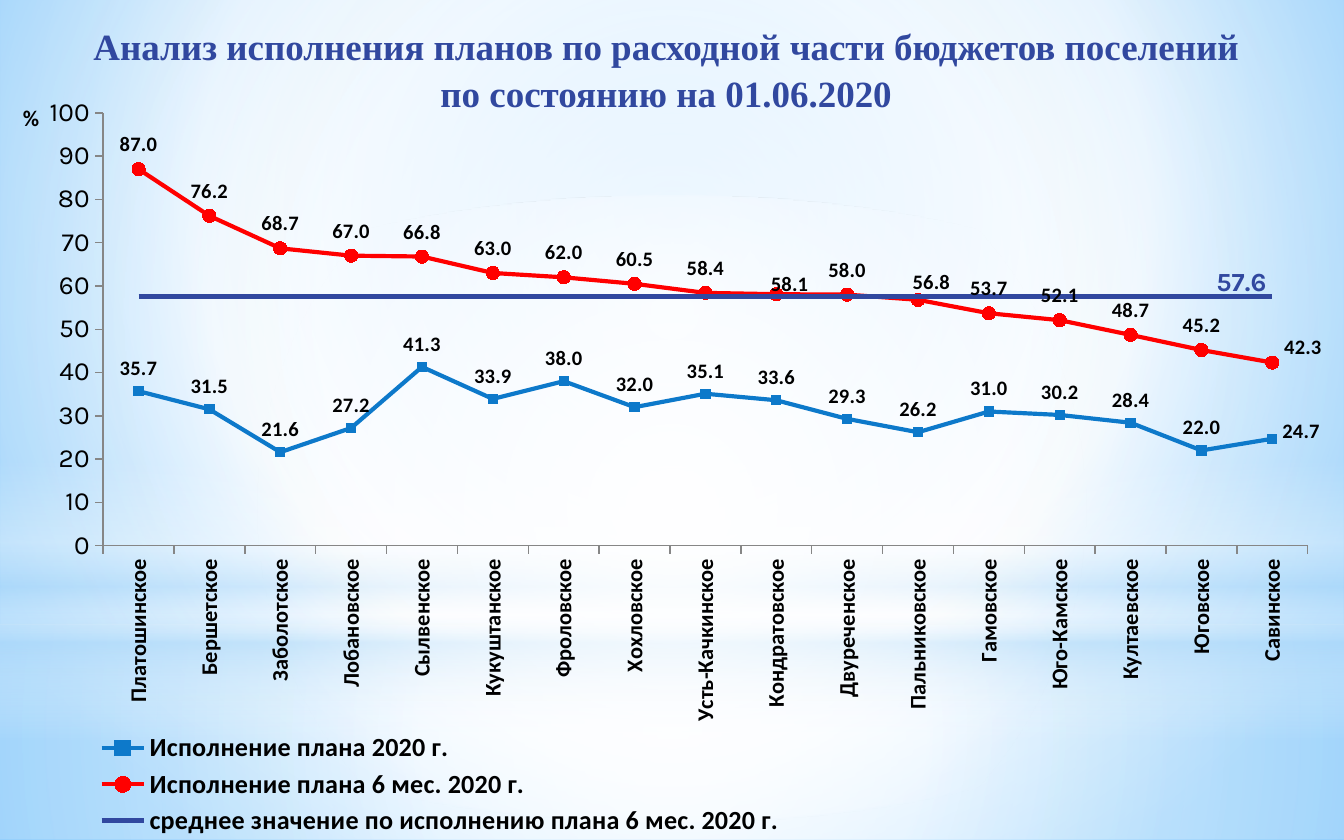
"""Build a slide with a line chart of settlement budget spending."""
from lxml import etree
from pptx import Presentation
from pptx import util as u
from pptx.chart.data import CategoryChartData
from pptx.dml.color import RGBColor
from pptx.enum import chart as ch, shapes, text
from pptx.oxml.ns import qn

BLUE = RGBColor(0x0D, 0x79, 0xCA)
RED = RGBColor(0xFF, 0x00, 0x00)
NAVY = RGBColor(0x31, 0x48, 0x9F)
BLACK = RGBColor(0x00, 0x00, 0x00)
GREY = RGBColor(0x86, 0x86, 0x86)

WIDE, HIGH = 10, 6.25
TITLE = ("Анализ исполнения планов по расходной части бюджетов поселений",
         "по состоянию на 01.06.2020")
CATS = ["Платошинское", "Бершетское", "Заболотское", "Лобановское", "Сылвенское",
        "Кукуштанское", "Фроловское", "Хохловское", "Усть-Качкинское",
        "Кондратовское", "Двуреченское", "Пальниковское", "Гамовское",
        "Юго-Камское", "Култаевское", "Юговское", "Савинское"]
TOP, RIGHT = ch.XL_LABEL_POSITION.ABOVE, ch.XL_LABEL_POSITION.RIGHT
SQUARE, ROUND, NONE = (ch.XL_MARKER_STYLE.SQUARE, ch.XL_MARKER_STYLE.CIRCLE,
                       ch.XL_MARKER_STYLE.NONE)
SERIES = [
    ("Исполнение плана 2020 г.",
     [35.7, 31.5, 21.6, 27.2, 41.3, 33.9, 38, 32, 35.1, 33.6, 29.3, 26.2, 31,
      30.2, 28.4, 22, 24.7], BLUE, 2.25, SQUARE, 5),
    ("Исполнение плана 6 мес. 2020 г.",
     [87, 76.2, 68.7, 67, 66.8, 63, 62, 60.5, 58.4, 58.1, 58, 56.8, 53.7,
      52.1, 48.7, 45.2, 42.3], RED, 2.25, ROUND, 7),
    ("среднее значение по исполнению плана 6 мес. 2020 г.",
     [57.6] * len(CATS), NAVY, 2.75, NONE, 5),
]
LABELS = [
    (0, 16, RIGHT, (0, -0.01), 11, "Calibri", BLACK),
    (1, 9, TOP, (0.01, 0.02), 11, "Calibri", BLACK),
    (1, 11, TOP, (0.01, 0.01), 11, "Calibri", BLACK),
    (1, 16, RIGHT, (0, -0.02), 11, "Calibri", BLACK),
    (2, 15, TOP, (0.03, 0.01), 14, "Karla", NAVY),
]
CENTRE = (50, 50, 50, 50)
BACK = [(0, "9ED5FF", 100), (60, "FFFFFF", 100), (100, "5BB9FF", 100)]
RECT, OVAL = shapes.MSO_SHAPE.RECTANGLE, shapes.MSO_SHAPE.OVAL
GLOWS = [
    (RECT, 4.65, 1.6, CENTRE,
     [(0, "FFFFFF", 91), (37, "FFFFFF", 76), (100, "B4DCFA", 79)]),
    (RECT, 0, 4.65, CENTRE,
     [(0, "FFFFFF", 89), (48, "FFFFFF", 62), (100, "B4DCFA", 79)]),
    (RECT, 3.43, 2.08, None,
     [(0, "FFFFFF", 0), (29, "FFFFFF", 30), (45, "B4DCFA", 40),
      (55, "FFFFFF", 26), (65, "B4DCFA", 60), (100, "FFFFFF", 0)]),
    (OVAL, 1.46, 4.65, CENTRE, [(0, "FFFFFF", 100), (56, "FFFFFF", 0)]),
]


def shade(owner, stops, rim):
    grad = next(owner.iter(qn("a:gradFill")))
    for kid in list(grad):
        grad.remove(kid)
    row = etree.SubElement(grad, qn("a:gsLst"))
    for spot, hue, clear in stops:
        stop = etree.SubElement(row, qn("a:gs"), pos=str(spot * 1000))
        tint = etree.SubElement(stop, qn("a:srgbClr"), val=hue)
        if clear < 100:
            etree.SubElement(tint, qn("a:alpha"), val=str(clear * 1000))
    if rim:
        ring = etree.SubElement(grad, qn("a:path"), attrib={"path": "circle"})
        sides = {k: str(v * 1000) for k, v in zip("ltrb", rim)}
        etree.SubElement(ring, qn("a:fillToRect"), attrib=sides)
    else:
        etree.SubElement(grad, qn("a:lin"), ang="5400000", scaled="0")


def place(box, slot, rule):
    for old in box.findall(qn("c:layout")):
        box.remove(old)
    frame = etree.Element(qn("c:layout"))
    hand = etree.SubElement(frame, qn("c:manualLayout"))
    for tag, val in rule.items():
        etree.SubElement(hand, qn("c:" + tag), val=str(val))
    box.insert(slot, frame)


def style(font, size, face, hue=BLACK, bold=True):
    font.size, font.name, font.bold = u.Pt(size), face, bold
    font.color.rgb = hue


def turn(box, angle):
    body = next(box.iter(qn("a:bodyPr")))
    body.set("rot", str(angle * 60000))
    body.set("vert", "horz")


def paint(slide):
    slide.background.fill.gradient()
    shade(slide.element, BACK, (20, 10, 20, 60))
    for kind, top, tall, rim, stops in GLOWS:
        glow = slide.shapes.add_shape(kind, 0, u.Inches(top), u.Inches(WIDE), u.Inches(tall))
        glow.shadow.inherit = False
        glow.line.fill.background()
        glow.fill.gradient()
        shade(glow.element, stops, rim)


def head(slide):
    box = slide.shapes.add_textbox(*map(u.Inches, (0.15, 0.06, 9.61, 0.89)))
    frame = box.text_frame
    frame.word_wrap = True
    frame.vertical_anchor = text.MSO_ANCHOR.MIDDLE
    frame.text = "\n".join(TITLE)
    for para in frame.paragraphs:
        para.alignment = text.PP_ALIGN.CENTER
        para.line_spacing = 1.05
        style(para.runs[0].font, 19.8, "Times New Roman", NAVY)


def plot(slide):
    data = CategoryChartData(number_format="#,##0.0")
    data.categories = CATS
    for name, vals, *_ in SERIES:
        data.add_series(name, vals)
    area = map(u.Inches, (0.04, 0.62, 9.96, 5.64))
    chart = slide.shapes.add_chart(ch.XL_CHART_TYPE.LINE_MARKERS, *area, data).chart
    style(chart.font, 18, "Karla", bold=False)
    chart.has_title = False
    chart.has_legend = True
    chart.legend.position = ch.XL_LEGEND_POSITION.BOTTOM
    chart.legend.include_in_layout = False
    style(chart.legend.font, 14, "Calibri")

    cat, val = chart.category_axis, chart.value_axis
    for axis, size, face, bold in ((cat, 12, "Calibri", True), (val, 14, "Karla", False)):
        axis.has_major_gridlines = False
        axis.major_tick_mark = ch.XL_TICK_MARK.OUTSIDE
        axis.format.line.color.rgb = GREY
        style(axis.tick_labels.font, size, face, bold=bold)
    val.minimum_scale, val.maximum_scale, val.major_unit = 0, 100, 10
    val.tick_labels.number_format = "#,##0"
    val.tick_labels.number_format_is_linked = False
    unit = val.axis_title.text_frame
    unit.text = "%"
    style(unit.paragraphs[0].runs[0].font, 12, "Calibri")

    for line, (_, _, hue, thick, mark, size) in zip(chart.plots[0].series, SERIES):
        line.smooth = False
        line.format.line.color.rgb = hue
        line.format.line.width = u.Pt(thick)
        line.marker.style, line.marker.size = mark, size
        if mark != NONE:
            line.marker.format.fill.solid()
            line.marker.format.fill.fore_color.rgb = hue
            line.marker.format.line.color.rgb = hue
        tags = line.data_labels
        tags.show_value = mark != NONE
        tags.position = TOP
        tags.number_format, tags.number_format_is_linked = "#,##0.0", False
        style(tags.font, 11, "Calibri")
    for row, idx, side, _, size, face, hue in LABELS:
        tag = chart.plots[0].series[row].points[idx].data_label
        style(tag.font, size, face, hue)
        tag.position = side

    root = chart.element
    for tag, (_, _, _, (x, y), *_) in zip(root.iter(qn("c:dLbl")), LABELS):
        form = etree.Element(qn("c:numFmt"), formatCode="#,##0.0", sourceLinked="0")
        tag.insert(1, form)
        place(tag, 1, {"x": x, "y": y})
    edge = {"xMode": "edge", "yMode": "edge"}
    place(next(root.iter(qn("c:plotArea"))), 0,
          {"layoutTarget": "inner", **edge, "x": 0.073, "y": 0.039, "w": 0.9, "h": 0.571})
    place(next(root.iter(qn("c:legend"))), 1,
          {**edge, "x": 0.05, "y": 0.85, "w": 0.55, "h": 0.15})
    name = next(next(root.iter(qn("c:valAx"))).iter(qn("c:title")))
    place(name, 1, {**edge, "x": 0.01, "y": 0.02})
    turn(name, 0)
    turn(next(root.iter(qn("c:catAx"))), -90)


def main():
    deck = Presentation()
    deck.slide_width, deck.slide_height = u.Inches(WIDE), u.Inches(HIGH)
    slide = deck.slides.add_slide(deck.slide_layouts[6])
    paint(slide)
    head(slide)
    plot(slide)
    deck.save("out.pptx")


if __name__ == "__main__":
    main()
